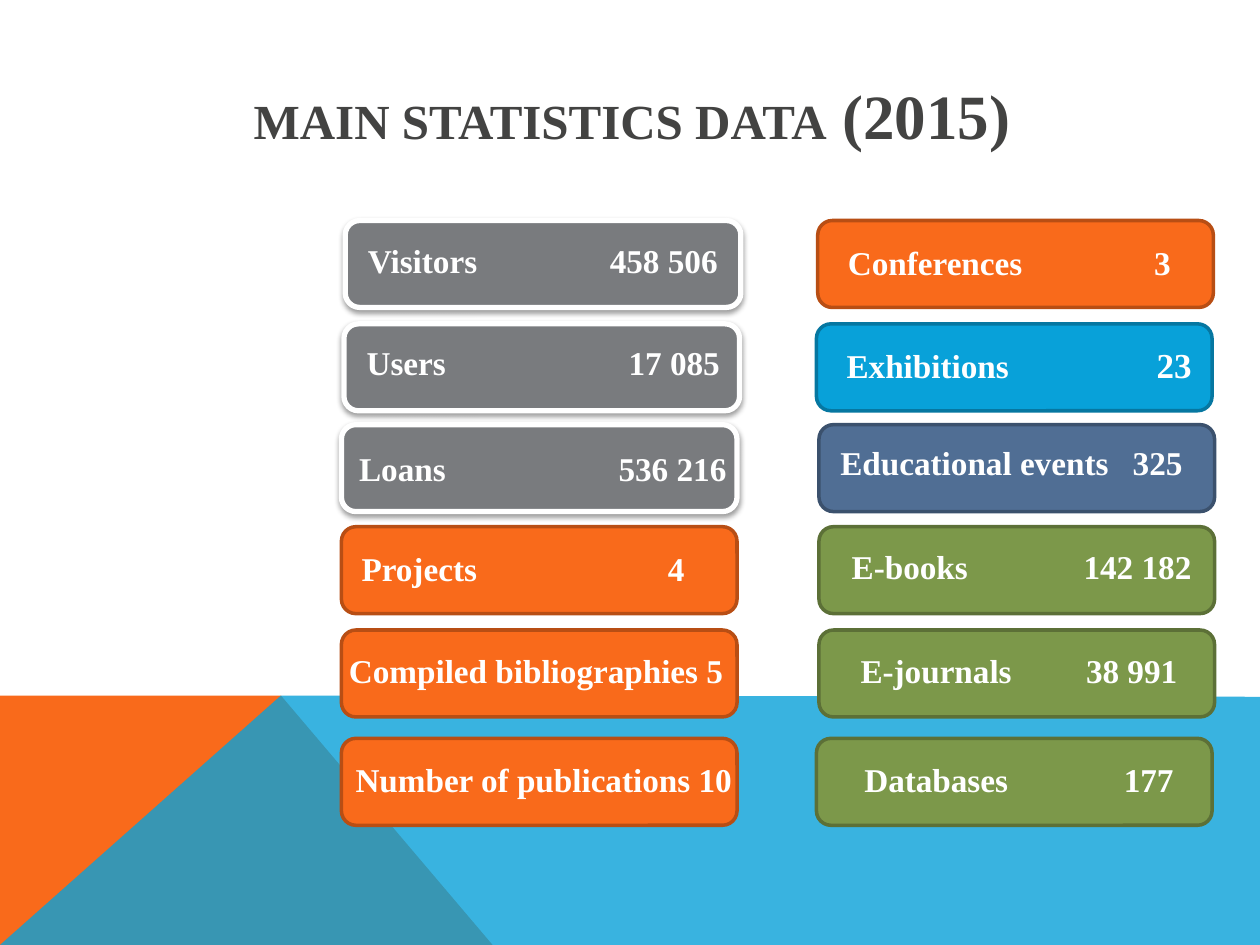
from dataclasses import dataclass
from typing import Optional

from lxml import etree
from pptx import Presentation
from pptx.dml.color import RGBColor
from pptx.enum.shapes import MSO_SHAPE
from pptx.enum.text import MSO_ANCHOR, MSO_AUTO_SIZE, PP_ALIGN
from pptx.oxml.ns import qn
from pptx.util import Inches, Pt

ROUNDED = MSO_SHAPE.ROUNDED_RECTANGLE
CENTER, LEFT = PP_ALIGN.CENTER, PP_ALIGN.LEFT
TOP, MIDDLE = MSO_ANCHOR.TOP, MSO_ANCHOR.MIDDLE
NO_AUTOFIT = MSO_AUTO_SIZE.NONE

FONT = "Times New Roman"
COLORS = {
    "white": "FFFFFF", "title": "434342", "black": "000000",
    "gray": "797B7E", "orange": "F96A1B", "orange_line": "B84E14",
    "blue": "08A1D9", "blue_line": "0677A1",
    "slate": "506E94", "slate_line": "3B516D",
    "green": "7C984A", "green_line": "5C7037",
}
ROW_TOPS = (1.75, 2.57, 3.37, 4.18, 5.0, 5.86)
CARD_WIDTH, CARD_HEIGHT = 3.14, 0.69
LABEL_WIDTH, LABEL_HEIGHT = 3.07, 0.37
WIDE_LABEL_WIDTH = 4.65


@dataclass(frozen=True)
class Statistic:
    """One card; without text_left and value_left its label is centred."""
    label: str
    value: str
    color: str
    row: int
    card_left: float
    box_left: float
    box_top: float
    text_left: Optional[float] = None
    value_left: Optional[float] = None
    value_size: int = 19
    box_width: float = LABEL_WIDTH


VISITORS = Statistic("Visitors", "458 506", "gray", 0, 2.74, 2.78, 1.86, 2.92, 4.84)
STATISTICS = (
    VISITORS,
    Statistic("Users", "17 085", "gray", 1, 2.73, 2.78, 2.67, 2.91, 4.99),
    Statistic("Loans", "536 216", "gray", 2, 2.71, 2.62, 3.51, 2.85, 4.91,
              box_width=3.39),
    Statistic("Projects", "4", "orange", 3, 2.71, 2.62, 4.3, 2.87, 5.3),
    Statistic("Compiled bibliographies", "5", "orange", 4, 2.71, 1.93, 5.11,
              box_width=WIDE_LABEL_WIDTH),
    Statistic("Number of publications", "10", "orange", 5, 2.71, 1.99, 5.98,
              box_width=WIDE_LABEL_WIDTH),
    Statistic("Conferences", "3", "orange", 0, 6.49, 6.48, 1.87, 6.73, 9.16),
    Statistic("Exhibitions", "23", "blue", 1, 6.48, 6.56, 2.68, 6.72, 9.18,
              value_size=20),
    Statistic("Educational events", "325", "slate", 2, 6.5, 6.5, 3.46, 6.67, 8.99),
    Statistic("E-books", "142 182", "green", 3, 6.5, 6.57, 4.29, 6.76, 8.6),
    Statistic("E-journals", "38 991", "green", 4, 6.5, 6.56, 5.11, 6.83, 8.62),
    Statistic("Databases", "177", "green", 5, 6.48, 6.56, 5.98, 6.86, 8.92),
)


def rgb(name: str) -> RGBColor:
    return RGBColor.from_string(COLORS[name])


def place(shape, left: float, top: float, width: float, height: float) -> None:
    shape.left, shape.top = Inches(left), Inches(top)
    shape.width, shape.height = Inches(width), Inches(height)


def format_run(run, size: int, color: str) -> None:
    run.font.name = FONT
    run.font.size = Pt(size)
    run.font.bold = True
    run.font.color.rgb = rgb(color)


def add_backdrop(slide, points: list[tuple[float, float]], color: str,
                 opacity: int = 100) -> None:
    corners = [(Inches(x), Inches(y)) for x, y in points]
    builder = slide.shapes.build_freeform(*corners[0])
    builder.add_line_segments(corners[1:], close=True)
    shape = builder.convert_to_shape()
    shape.shadow.inherit = False
    shape.fill.solid()
    shape.fill.fore_color.rgb = rgb(color)
    shape.line.fill.background()
    if opacity < 100:
        fill_color = shape.element.spPr.find(f"{qn('a:solidFill')}/{qn('a:srgbClr')}")
        etree.SubElement(fill_color, qn("a:alpha"), val=str(opacity * 1000))


def add_drop_shadow(shape) -> None:
    effects = shape.element.spPr.find(qn("a:effectLst"))
    shadow = etree.SubElement(
        effects, qn("a:outerShdw"), blurRad=str(Pt(3.1)), dist=str(Pt(1.6)),
        dir="5400000", rotWithShape="0")
    color = etree.SubElement(shadow, qn("a:srgbClr"), val=COLORS["black"])
    etree.SubElement(color, qn("a:alpha"), val="38000")


def add_card(slide, statistic: Statistic) -> None:
    raised = statistic.color == "gray"
    card = slide.shapes.add_shape(
        ROUNDED, Inches(statistic.card_left), Inches(ROW_TOPS[statistic.row]),
        Inches(CARD_WIDTH), Inches(CARD_HEIGHT))
    card.fill.solid()
    card.fill.fore_color.rgb = rgb(statistic.color)
    card.line.color.rgb = rgb("white" if raised else f"{statistic.color}_line")
    card.line.width = Pt(3 if raised else 2)
    card.shadow.inherit = False
    if raised:
        add_drop_shadow(card)


def write_label(shape, statistic: Statistic) -> None:
    """Set the label; a hanging indent holds the place of its value."""
    frame = shape.text_frame
    frame.word_wrap = True
    frame.auto_size = NO_AUTOFIT
    frame.vertical_anchor = TOP
    paragraph = frame.paragraphs[0]
    properties = paragraph._p.get_or_add_pPr()
    etree.SubElement(properties, qn("a:buNone"))
    paragraph.space_before = Pt(0)
    paragraph.text = statistic.label
    value = paragraph.add_run()
    if statistic.text_left is None:
        paragraph.alignment = CENTER
        value.text = f" {statistic.value}"
    else:
        paragraph.alignment = LEFT
        frame.margin_left = Inches(statistic.text_left - statistic.box_left)
        frame.margin_right = 0
        hanging = Inches(statistic.value_left - statistic.text_left)
        properties.set("marL", str(hanging))
        properties.set("indent", str(-hanging))
        value.text = f"\t{statistic.value}"
    format_run(paragraph.runs[0], 19, "white")
    format_run(value, statistic.value_size, "white")


def write_title(title) -> None:
    place(title, 0.48, 0.28, 9.07, 1.25)
    title.text_frame.vertical_anchor = MIDDLE
    paragraph = title.text_frame.paragraphs[0]
    paragraph.text = "MAIN STATISTICS DATA"
    paragraph.alignment = CENTER
    year = paragraph.add_run()
    year.text = " (2015)"
    format_run(paragraph.runs[0], 28, "title")
    format_run(year, 36, "title")


def main() -> None:
    presentation = Presentation()
    presentation.slide_width, presentation.slide_height = Inches(10), Inches(7.5)
    slide = presentation.slides.add_slide(presentation.slide_layouts[1])
    write_title(slide.shapes.title)

    add_backdrop(slide, [(0, 7.5), (0, 5.52), (2.23, 5.52), (3.91, 7.5)], "orange")
    add_backdrop(slide, [(0, 7.5), (2.23, 5.52), (10, 5.53), (10, 7.5)], "blue", 80)
    for statistic in STATISTICS:
        add_card(slide, statistic)

    body = slide.placeholders[1]
    body.element.getparent().append(body.element)  # bring in front of the cards
    place(body, VISITORS.box_left, VISITORS.box_top, LABEL_WIDTH, 0.75)
    write_label(body, VISITORS)
    for statistic in STATISTICS[1:]:
        box = slide.shapes.add_textbox(
            Inches(statistic.box_left), Inches(statistic.box_top),
            Inches(statistic.box_width), Inches(LABEL_HEIGHT))
        write_label(box, statistic)

    presentation.save("out.pptx")


if __name__ == "__main__":
    main()
